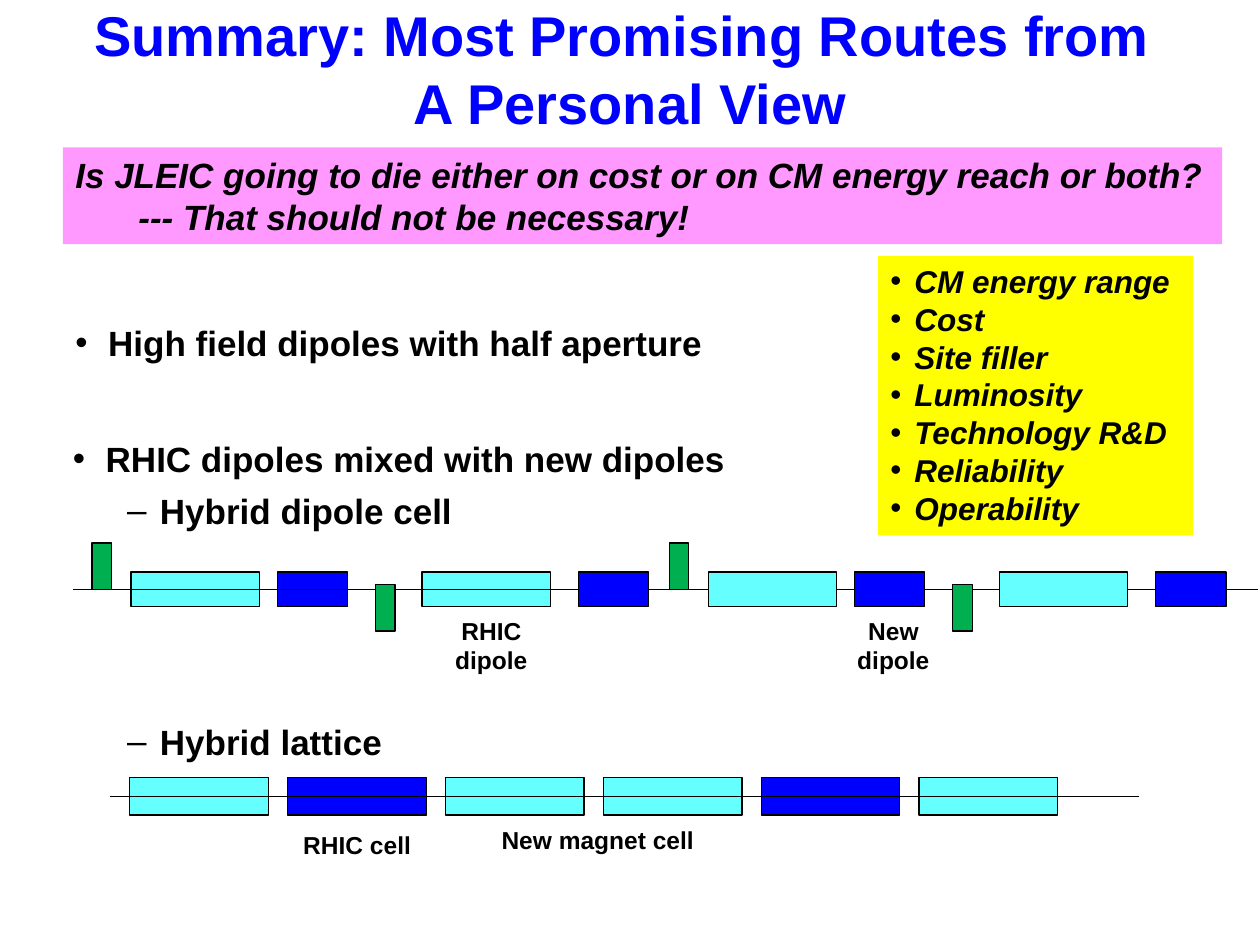
from pptx import Presentation
from pptx.dml.color import RGBColor
from pptx.enum.shapes import MSO_CONNECTOR, MSO_SHAPE
from pptx.enum.text import MSO_ANCHOR, MSO_AUTO_SIZE, PP_ALIGN
from pptx.oxml.ns import qn
from pptx.util import Pt
from lxml.etree import SubElement

COLORS = {"black": "000000", "blue": "0000FF", "cyan": "66FFFF",
          "green": "00B050", "pink": "FF99FF", "yellow": "FFFF00"}
DOT = ("•", 18.72, -18.72)
DASH = ("–", 49.7, -18.72)
SMALL = ("•", 13.7, -13.7)


def color(name):
    return RGBColor.from_string(COLORS[name])


class Sheet:
    """Holds the font and the slide being drawn; lengths are in points."""

    def __init__(self, slide, face="Arial"):
        self.slide = slide
        self.face = face

    def run(self, para, text, size, ink="black", slant=False):
        run = para.add_run()
        run.text = text
        font = run.font
        font.name, font.size = self.face, Pt(size)
        font.bold, font.italic = True, slant
        font.color.rgb = color(ink)

    def bullet(self, para, mark):
        char, left, hang = mark
        props = para._p.get_or_add_pPr()
        props.set("marL", str(Pt(left)))
        props.set("indent", str(Pt(hang)))
        SubElement(props, qn("a:buFont")).set("typeface", self.face)
        SubElement(props, qn("a:buChar")).set("char", char)

    def title(self, x, y, w, h, lines):
        shape = self.slide.shapes.title
        shape.left, shape.top, shape.width, shape.height = map(Pt, (x, y, w, h))
        frame = shape.text_frame
        frame.auto_size = MSO_AUTO_SIZE.NONE
        frame.vertical_anchor = MSO_ANCHOR.MIDDLE
        para = frame.paragraphs[0]
        para.alignment = PP_ALIGN.CENTER
        for i, line in enumerate(lines):
            if i:
                para.add_line_break()
            self.run(para, line, 32, "blue")

    def text(self, x, y, w, h, lines, size, fill=None, slant=False,
             align=PP_ALIGN.LEFT, gap=0):
        """Each line is a pair of its text and its bullet mark, or None."""
        box = self.slide.shapes.add_textbox(*map(Pt, (x, y, w, h)))
        if fill:
            box.fill.solid()
            box.fill.fore_color.rgb = color(fill)
        frame = box.text_frame
        frame.word_wrap = True
        for i, (line, mark) in enumerate(lines):
            para = frame.add_paragraph() if i else frame.paragraphs[0]
            para.alignment = align
            if i and gap:
                para.space_before = Pt(gap)
            if mark:
                self.bullet(para, mark)
            self.run(para, line, size, slant=slant)

    def label(self, x, y, w, h, line):
        self.text(x, y, w, h, [(line, None)], 14, align=PP_ALIGN.CENTER)

    def magnet(self, x, y, w, h, fill):
        box = self.slide.shapes.add_shape(MSO_SHAPE.RECTANGLE, *map(Pt, (x, y, w, h)))
        box.shadow.inherit = False
        box.fill.solid()
        box.fill.fore_color.rgb = color(fill)
        box.line.color.rgb = color("black")
        box.line.width = Pt(0.75)

    def beam(self, start, end, y):
        line = self.slide.shapes.add_connector(
            MSO_CONNECTOR.STRAIGHT, *map(Pt, (start, y, end, y)))
        line.line.color.rgb = color("black")
        line.line.width = Pt(0.75)
        SubElement(line._element.spPr, qn("a:effectLst"))


def lattice(sheet):
    step = 90.2
    for half in range(2):
        left = half * 3 * step
        for i, fill in enumerate(("cyan", "blue", "cyan")):
            sheet.magnet(74.2 + left + i * step, 444.2, 79.2, 21.6, fill)
        sheet.beam(62.6 + left, 380.2 + left, 455)
    sheet.label(158.4, 470.9, 91.4, 24.5, "RHIC cell")
    sheet.label(260.6, 468, 162, 24.5, "New magnet cell")


def dipoles(sheet):
    for half in range(2):
        left = half * 329.8
        for x, w, fill in ((74.9, 73.4, "cyan"), (158.4, 40.3, "blue"),
                           (241.2, 73.4, "cyan"), (330.5, 40.3, "blue")):
            if not half and x > 300:
                sheet.beam(41.8, 718.6, 337)
            sheet.magnet(x + left, 326.9, w, 19.7, fill)
        for x, y in ((52.6, 310.3), (214.6, 334.1)):
            sheet.magnet(x + left, y, 11.2, 26.6, "green")
    sheet.label(244.1, 348.5, 73.4, 41, "RHIC dipole")
    sheet.label(470.2, 348.5, 80.6, 41, "New dipole")


def main():
    deck = Presentation()
    deck.slide_width, deck.slide_height = Pt(720), Pt(540)
    sheet = Sheet(deck.slides.add_slide(deck.slide_layouts[5]))
    sheet.title(0, 5.8, 720, 66.2,
                ("Summary: Most Promising Routes from ", "A Personal View"))
    sheet.text(34.6, 408.2, 566, 36, [("Hybrid lattice", DASH)], 20)
    lattice(sheet)
    sheet.text(36, 84.2, 662.4, 55.4, [
        ("Is JLEIC going to die either on cost or on CM energy reach or both?", None),
        ("\t--- That should not be necessary!", None)], 20, "pink", True)
    sheet.text(36, 180, 494, 36, [("High field dipoles with half aperture", DOT)], 20)
    dipoles(sheet)
    sheet.text(34.6, 246.2, 616.3, 58.3, [
        ("RHIC dipoles mixed with new dipoles", DOT),
        ("Hybrid dipole cell", DASH)], 20, gap=6)
    goals = ("CM energy range", "Cost", "Site filler", "Luminosity",
             "Technology R&D", "Reliability", "Operability")
    sheet.text(501.8, 146.2, 180, 159.8, [(goal, SMALL) for goal in goals],
               18, "yellow", True)
    deck.save("out.pptx")


if __name__ == "__main__":
    main()
